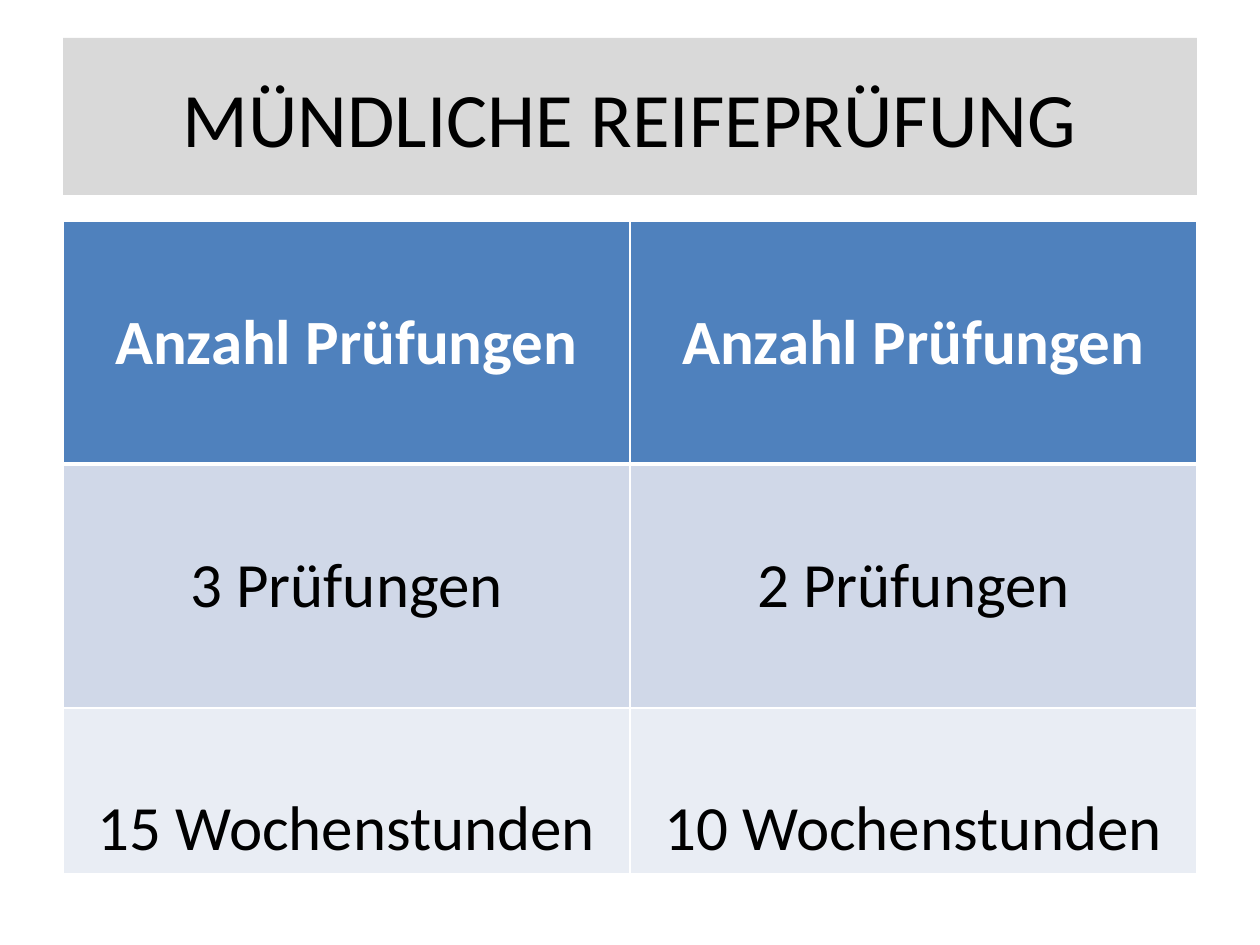
from lxml.etree import SubElement
from pptx import Presentation
from pptx.dml.color import RGBColor
from pptx.enum.text import MSO_ANCHOR, PP_ALIGN
from pptx.oxml.ns import qn
from pptx.util import Pt

PX = 914400 / 126
COLORS = {
    "title": "D9D9D9", "head": "4F81BD", "band": "D0D8E8",
    "pale": "E9EDF4", "white": "FFFFFF", "black": "000000",
}
LEFT, WIDTH = 63, 1134
# Row height, fill, text colour, bold, anchor, texts
ROWS = [
    (243, "head", "white", True, MSO_ANCHOR.MIDDLE,
     ["Anzahl Prüfungen", "Anzahl Prüfungen"]),
    (244, "band", "black", False, MSO_ANCHOR.MIDDLE,
     ["3 Prüfungen", "2 Prüfungen"]),
    (166, "pale", "black", False, MSO_ANCHOR.BOTTOM,
     ["15 Wochenstunden", "10 Wochenstunden"]),
]


def emu(px):
    return round(px * PX)


def color(name):
    return RGBColor.from_string(COLORS[name])


def paint(item, name):
    item.fill.solid()
    item.fill.fore_color.rgb = color(name)


def write(frame, text, size=36, ink="black", bold=False):
    para = frame.paragraphs[0]
    para.alignment = PP_ALIGN.CENTER
    run = para.add_run()
    run.text = text
    font = run.font
    font.name, font.size, font.bold = "Calibri", Pt(size), bold
    font.color.rgb = color(ink)


def border(cell, top, bottom):
    props = cell._tc.get_or_add_tcPr()
    for side, width in (("L", 1), ("R", 1), ("T", top), ("B", bottom)):
        line = SubElement(props, qn(f"a:ln{side}"), w=str(Pt(width)))
        fill = SubElement(line, qn("a:solidFill"))
        SubElement(fill, qn("a:srgbClr"), val=COLORS["white"])


def add_title(slide, text):
    title = slide.shapes.title
    title.left, title.top = emu(LEFT), emu(38)
    title.width, title.height = emu(WIDTH), emu(157)
    paint(title, "title")
    title.text_frame.vertical_anchor = MSO_ANCHOR.MIDDLE
    write(title.text_frame, text, size=44)


def add_grid(slide):
    height = sum(row[0] for row in ROWS)
    table = slide.shapes.add_table(
        len(ROWS), 2, emu(LEFT), emu(221), emu(WIDTH), emu(height)).table
    for r, (tall, fill, ink, bold, anchor, texts) in enumerate(ROWS):
        table.rows[r].height = emu(tall)
        for c, text in enumerate(texts):
            cell = table.cell(r, c)
            # Thick rule between the header and the body
            border(cell, 3 if r == 1 else 1, 3 if r == 0 else 1)
            paint(cell, fill)
            cell.vertical_anchor = anchor
            write(cell.text_frame, text, ink=ink, bold=bold)


def main():
    deck = Presentation()
    deck.slide_width, deck.slide_height = emu(1260), emu(945)
    slide = deck.slides.add_slide(deck.slide_layouts[5])
    add_title(slide, "MÜNDLICHE REIFEPRÜFUNG")
    add_grid(slide)
    deck.save("out.pptx")


if __name__ == "__main__":
    main()
